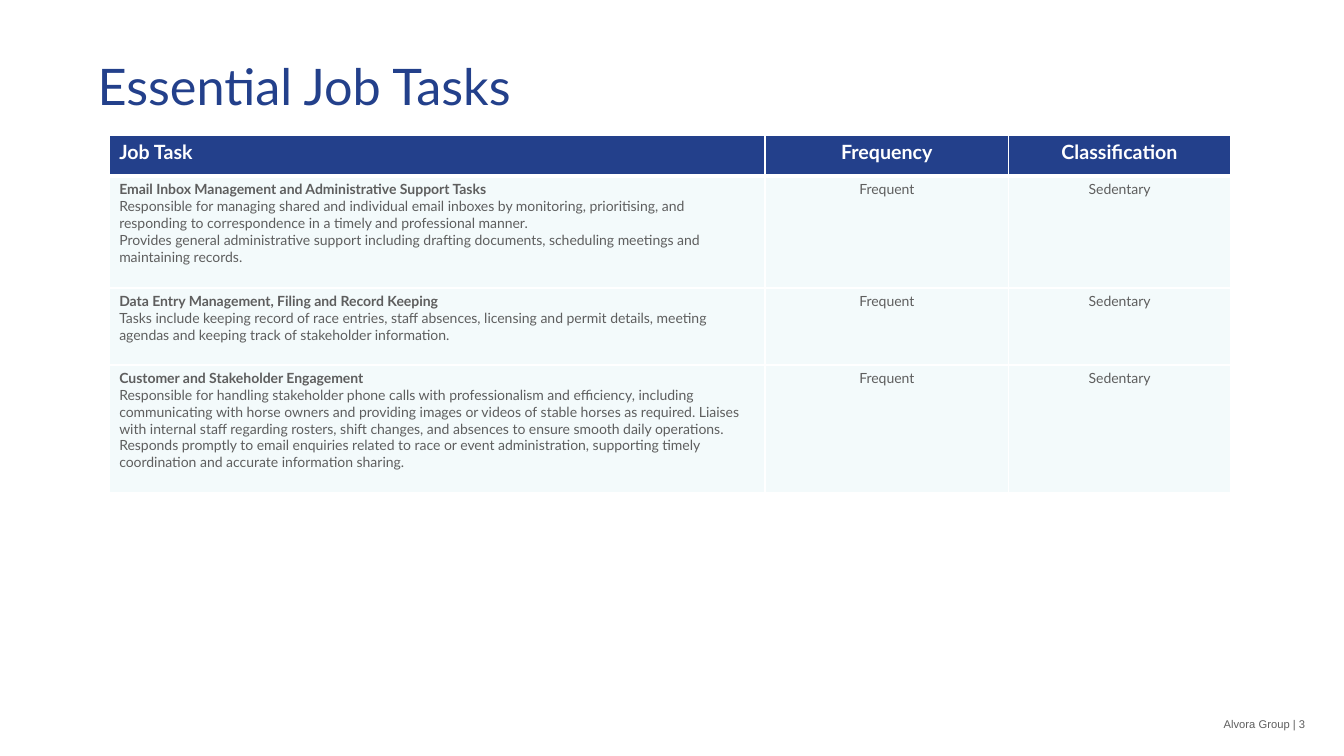
from dataclasses import dataclass

from lxml import etree
from pptx import Presentation
from pptx.dml.color import RGBColor
from pptx.enum import text as txt
from pptx.oxml import ns
from pptx.util import Pt


@dataclass(frozen=True)
class Theme:
    navy: str = "23408B"
    teal: str = "24A8C0"
    grey: str = "5E5E5E"
    white: str = "FFFFFF"
    font: str = "Lato"
    footer_font: str = "Arial"
    title_size: float = 36
    header_size: float = 14
    body_size: float = 10
    footer_size: float = 8
    tint_percent: int = 5
    rule: float = 1
    header_rule: float = 3


@dataclass(frozen=True)
class JobTask:
    name: str
    details: tuple[str, ...]
    height: float
    frequency: str = "Frequent"
    classification: str = "Sedentary"


THEME = Theme()
HEADINGS = ("Job Task", "Frequency", "Classification")
COLUMN_WIDTHS = (468.5, 174, 158.5)
HEADER_HEIGHT = 29
TASKS = (
    JobTask("Email Inbox Management and Administrative Support Tasks", (
        "Responsible for managing shared and individual email inboxes by monitoring, "
        "prioritising, and responding to correspondence in a timely and professional manner.",
        "Provides general administrative support including drafting documents, "
        "scheduling meetings and maintaining records.",
    ), 80),
    JobTask("Data Entry Management, Filing and Record Keeping", (
        "Tasks include keeping record of race entries, staff absences, licensing and permit "
        "details, meeting agendas and keeping track of stakeholder information.",
    ), 55),
    JobTask("Customer and Stakeholder Engagement", (
        "Responsible for handling stakeholder phone calls with professionalism and efficiency, "
        "including communicating with horse owners and providing images or videos of stable "
        "horses as required. Liaises with internal staff regarding rosters, shift changes, and "
        "absences to ensure smooth daily operations. Responds promptly to email enquiries "
        "related to race or event administration, supporting timely coordination and accurate "
        "information sharing.",
    ), 91),
)


def write(paragraph, words: str, size: float, color: str, bold: bool = False,
          align=txt.PP_ALIGN.LEFT, face: str = THEME.font) -> None:
    paragraph.text = words
    paragraph.alignment = align
    font = paragraph.font
    font.name, font.size, font.bold = face, Pt(size), bold
    font.color.rgb = RGBColor.from_string(color)


def set_borders(cell, top: float, bottom: float) -> None:
    """Rule all four sides in white; must run before the cell is filled."""
    properties = cell._tc.get_or_add_tcPr()
    widths = {"L": THEME.rule, "R": THEME.rule, "T": top, "B": bottom}
    for side, width in widths.items():
        line = etree.SubElement(properties, ns.qn(f"a:ln{side}"), w=str(Pt(width)))
        fill = etree.SubElement(line, ns.qn("a:solidFill"))
        etree.SubElement(fill, ns.qn("a:srgbClr"), val=THEME.white)


def fill_cell(cell, color: str, percent: int = 100) -> None:
    cell.fill.solid()
    cell.fill.fore_color.rgb = RGBColor.from_string(color)
    if percent < 100:
        swatch = cell._tc.tcPr.find(f"{ns.qn('a:solidFill')}/{ns.qn('a:srgbClr')}")
        etree.SubElement(swatch, ns.qn("a:alpha"), val=str(percent * 1000))


def column_align(column: int):
    return txt.PP_ALIGN.CENTER if column else txt.PP_ALIGN.LEFT


def add_title(slide) -> None:
    title = slide.shapes.title
    title.left, title.top, title.width, title.height = Pt(62.5), Pt(35.5), Pt(480), Pt(51)
    frame = title.text_frame
    frame.auto_size = txt.MSO_AUTO_SIZE.NONE
    frame.vertical_anchor = txt.MSO_ANCHOR.TOP
    write(frame.paragraphs[0], "Essential Job Tasks", THEME.title_size, THEME.navy)


def add_task_table(slide) -> None:
    heights = (HEADER_HEIGHT, *(task.height for task in TASKS))
    table = slide.shapes.add_table(
        len(heights), len(HEADINGS), Pt(78), Pt(96.75),
        Pt(sum(COLUMN_WIDTHS)), Pt(sum(heights))).table
    table.horz_banding = False
    for column, width in zip(table.columns, COLUMN_WIDTHS):
        column.width = Pt(width)
    for row, height in zip(table.rows, heights):
        row.height = Pt(height)

    for column, heading in enumerate(HEADINGS):
        cell = table.cell(0, column)
        set_borders(cell, THEME.rule, THEME.header_rule)
        fill_cell(cell, THEME.navy)
        write(cell.text_frame.paragraphs[0], heading, THEME.header_size, THEME.white,
              True, column_align(column))

    for row, task in enumerate(TASKS, start=1):
        entries = ((task.name, *task.details), (task.frequency,), (task.classification,))
        for column, lines in enumerate(entries):
            cell = table.cell(row, column)
            set_borders(cell, THEME.header_rule if row == 1 else THEME.rule, THEME.rule)
            fill_cell(cell, THEME.teal, THEME.tint_percent)
            frame = cell.text_frame
            for index, line in enumerate(lines):
                paragraph = frame.add_paragraph() if index else frame.paragraphs[0]
                write(paragraph, line, THEME.body_size, THEME.grey,
                      column == 0 and index == 0, column_align(column))


def add_footer(slide) -> None:
    footer = slide.shapes.add_textbox(Pt(459.5), Pt(508.5), Pt(480), Pt(17)).text_frame
    footer.word_wrap = True
    write(footer.paragraphs[0], "Alvora Group | 3", THEME.footer_size, THEME.grey,
          align=txt.PP_ALIGN.RIGHT, face=THEME.footer_font)


def main() -> None:
    deck = Presentation()
    deck.slide_width, deck.slide_height = Pt(960), Pt(540)
    slide = deck.slides.add_slide(deck.slide_layouts[5])
    add_title(slide)
    add_task_table(slide)
    add_footer(slide)
    deck.save("out.pptx")


if __name__ == "__main__":
    main()
